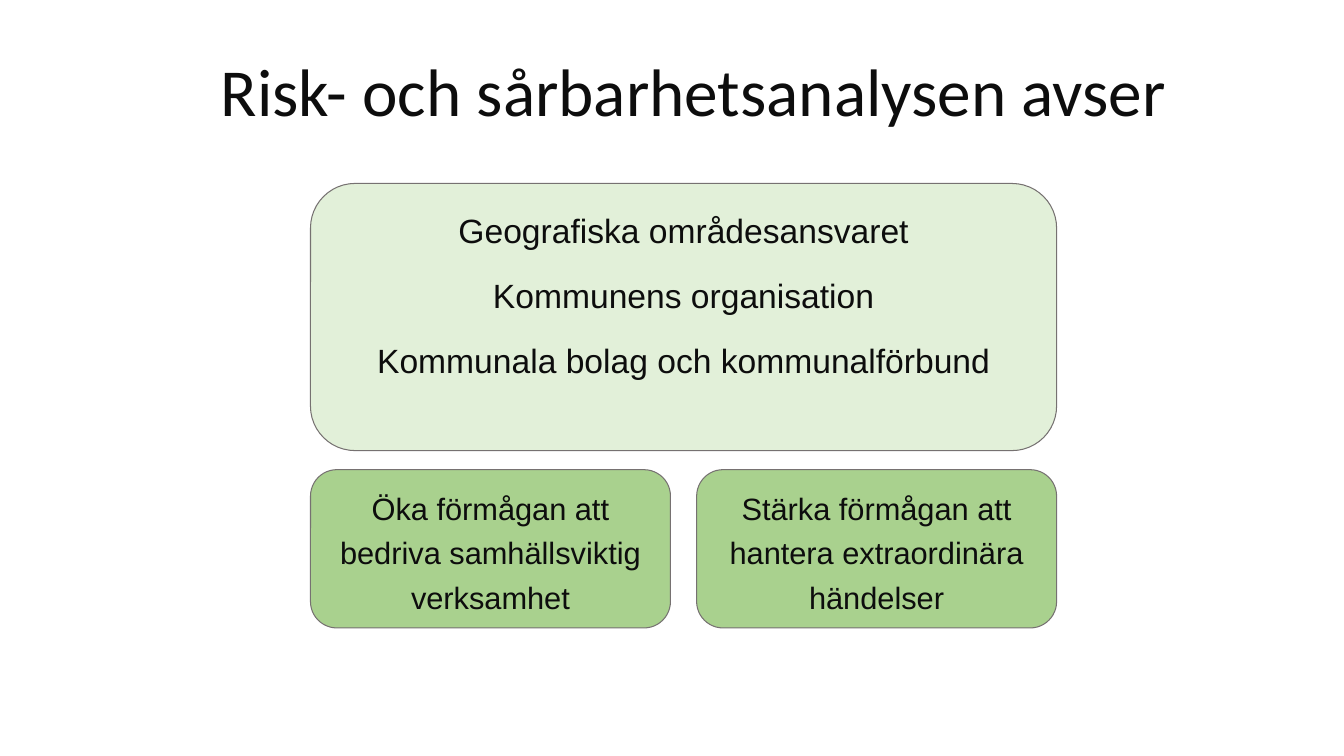
from pptx import Presentation
from pptx.dml.color import RGBColor
from pptx.enum.shapes import MSO_SHAPE
from pptx.enum.text import MSO_ANCHOR, PP_ALIGN
from pptx.util import Inches, Pt

INK = RGBColor(0x0D, 0x0D, 0x0D)
OUTLINE = RGBColor(0x76, 0x71, 0x71)
PALE_GREEN = RGBColor(0xE2, 0xF0, 0xD9)
GREEN = RGBColor(0xA9, 0xD1, 0x8E)

SCOPE = [
    "Geografiska områdesansvaret",
    "Kommunens organisation",
    "Kommunala bolag och kommunalförbund",
]
GOALS = [
    "Öka förmågan att bedriva samhällsviktig verksamhet",
    "Stärka förmågan att hantera extraordinära händelser",
]


def style_font(font, name, size):
    """Set the typeface, size and ink colour of a font."""
    font.name = name
    font.size = Pt(size)
    font.color.rgb = INK


def add_title(page, left, top, width, height, text):
    """Place the slide title, centred vertically in its box."""
    box = page.shapes.add_textbox(*map(Inches, (left, top, width, height)))
    frame = box.text_frame
    frame.word_wrap = True
    frame.vertical_anchor = MSO_ANCHOR.MIDDLE
    frame.text = text
    style_font(frame.paragraphs[0].runs[0].font, "Calibri", 48)


def add_card(page, left, top, width, height, lines, fill, size):
    """Place a rounded card with one centred paragraph per line."""
    card = page.shapes.add_shape(
        MSO_SHAPE.ROUNDED_RECTANGLE, *map(Inches, (left, top, width, height)))
    card.shadow.inherit = False
    card.fill.solid()
    card.fill.fore_color.rgb = fill
    card.line.color.rgb = OUTLINE
    card.line.width = Pt(0.75)
    frame = card.text_frame
    frame.word_wrap = True
    frame.vertical_anchor = MSO_ANCHOR.TOP
    frame.text = "\n".join(lines)
    for para in frame.paragraphs:
        para.alignment = PP_ALIGN.CENTER
        para.line_spacing = 1.2
        para.space_after = Pt(12)
        for span in para.runs:
            style_font(span.font, "Arial", size)


def add_goals(page, left, top, width, height, gap):
    """Place the goal cards side by side in equal columns."""
    column = (width - gap * (len(GOALS) - 1)) / len(GOALS)
    for index, goal in enumerate(GOALS):
        add_card(page, left + index * (column + gap), top, column, height,
                 [goal], GREEN, 22)


def main():
    """Build the slide and save the deck."""
    deck = Presentation()
    deck.slide_width, deck.slide_height = Inches(13.33), Inches(7.5)
    page = deck.slides.add_slide(deck.slide_layouts[6])
    left, width = 3.08, 7.4
    add_title(page, 2.09, 0.34, 9.89, 1.1, "Risk- och sårbarhetsanalysen avser")
    add_card(page, left, 1.82, width, 2.65, SCOPE, PALE_GREEN, 24)
    add_goals(page, left, 4.66, width, 1.57, 0.26)
    deck.save("out.pptx")


if __name__ == "__main__":
    main()
